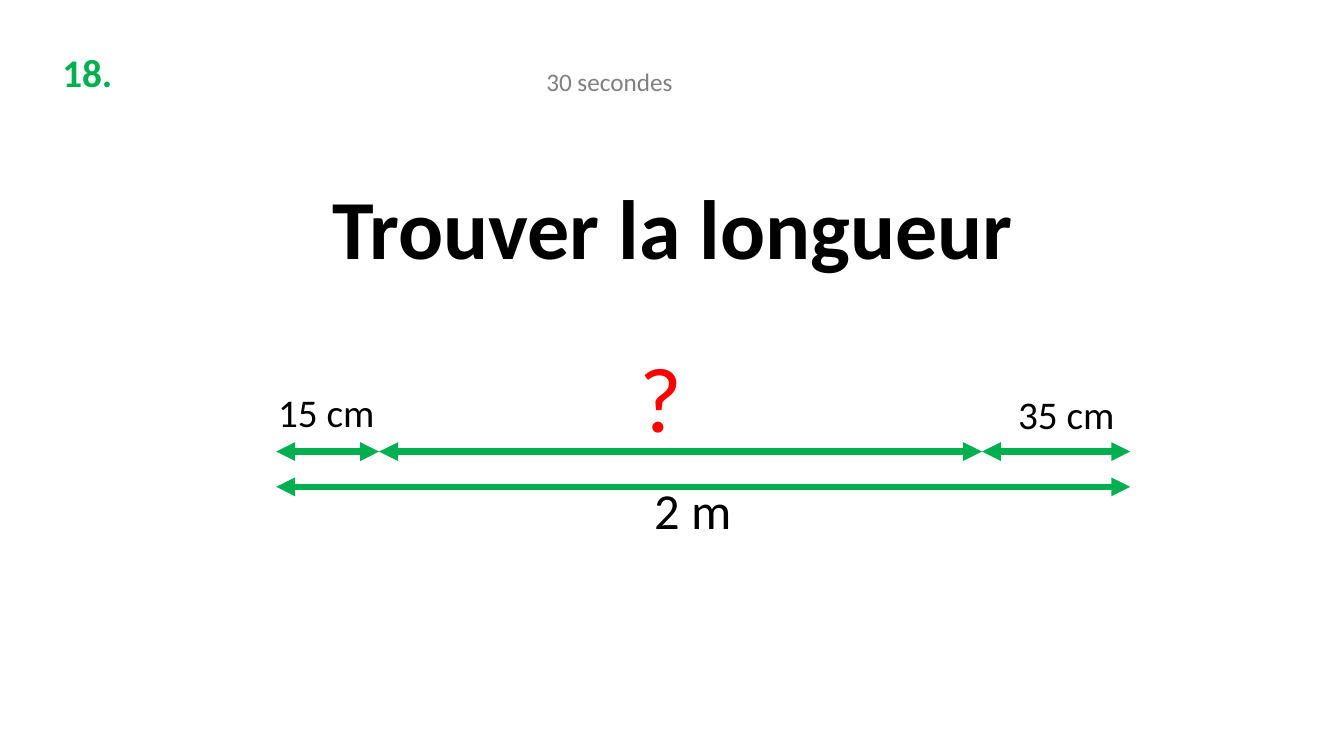
from dataclasses import dataclass
from itertools import pairwise

from lxml.etree import SubElement
from pptx import Presentation
from pptx.dml.color import RGBColor
from pptx.enum.shapes import MSO_CONNECTOR
from pptx.enum.text import MSO_ANCHOR, MSO_AUTO_SIZE, PP_ALIGN
from pptx.oxml.ns import qn
from pptx.util import Inches, Pt


@dataclass(frozen=True)
class Theme:
    font: str = "Calibri"
    black: str = "000000"
    green: str = "00B050"
    gray: str = "808080"
    red: str = "FF0000"
    title: int = 60
    mark: int = 66
    total: int = 36
    label: int = 28
    note: int = 18
    stroke: float = 4.5


THEME = Theme()


def add_run(para, text, size, color, bold=False):
    run = para.add_run()
    run.text = text
    font = run.font
    font.name = THEME.font
    font.size = Pt(size)
    font.bold = bold
    font.color.rgb = RGBColor.from_string(color)


def set_title(slide, text):
    title = slide.shapes.title
    title.left, title.top = Inches(1.67), Inches(1.44)
    title.width, title.height = Inches(10), Inches(1.36)
    frame = title.text_frame
    frame.auto_size = MSO_AUTO_SIZE.NONE
    frame.vertical_anchor = MSO_ANCHOR.BOTTOM
    para = frame.paragraphs[0]
    para.alignment = PP_ALIGN.CENTER
    para.line_spacing = 0.9
    add_run(para, text, THEME.title, THEME.black, bold=True)


def add_label(slide, text, box, size, color, bold=False, wrap=False):
    shape = slide.shapes.add_textbox(*map(Inches, box))
    frame = shape.text_frame
    frame.word_wrap = wrap
    frame.auto_size = MSO_AUTO_SIZE.SHAPE_TO_FIT_TEXT
    add_run(frame.paragraphs[0], text, size, color, bold)


def add_span(slide, start, end, y):
    """Draw a level line with an arrowhead at both ends."""
    line = slide.shapes.add_connector(
        MSO_CONNECTOR.STRAIGHT, Inches(start), Inches(y), Inches(end), Inches(y))
    line.line.width = Pt(THEME.stroke)
    line.line.color.rgb = RGBColor.from_string(THEME.green)
    stroke = line.line._get_or_add_ln()
    for tag in ("a:headEnd", "a:tailEnd"):
        SubElement(stroke, qn(tag), type="triangle")
    SubElement(line._element.spPr, qn("a:effectLst"))


def main():
    deck = Presentation()
    deck.slide_width, deck.slide_height = Inches(13.33), Inches(7.5)
    slide = deck.slides.add_slide(deck.slide_layouts.get_by_name("Title Only"))

    set_title(slide, "Trouver la longueur")
    add_label(slide, "18.", (0.52, 0.43, 1.3, 0.57),
              THEME.label, THEME.green, bold=True, wrap=True)
    add_label(slide, "30 secondes", (5.32, 0.61, 1.47, 0.4), THEME.note, THEME.gray)
    add_label(slide, "15 cm", (2.66, 3.8, 1.17, 0.57), THEME.label, THEME.black)
    add_label(slide, "35 cm", (10, 3.82, 1.21, 0.57), THEME.label, THEME.black)

    stops = (2.74, 3.76, 9.74, 11.21)
    add_span(slide, stops[0], stops[-1], 4.83)
    for start, end in pairwise(stops):
        add_span(slide, start, end, 4.48)

    add_label(slide, "2 m", (6.39, 4.7, 0.98, 0.71), THEME.total, THEME.black)
    add_label(slide, "?", (6.24, 3.32, 6.67, 1.21), THEME.mark, THEME.red, wrap=True)
    deck.save("out.pptx")


if __name__ == "__main__":
    main()
